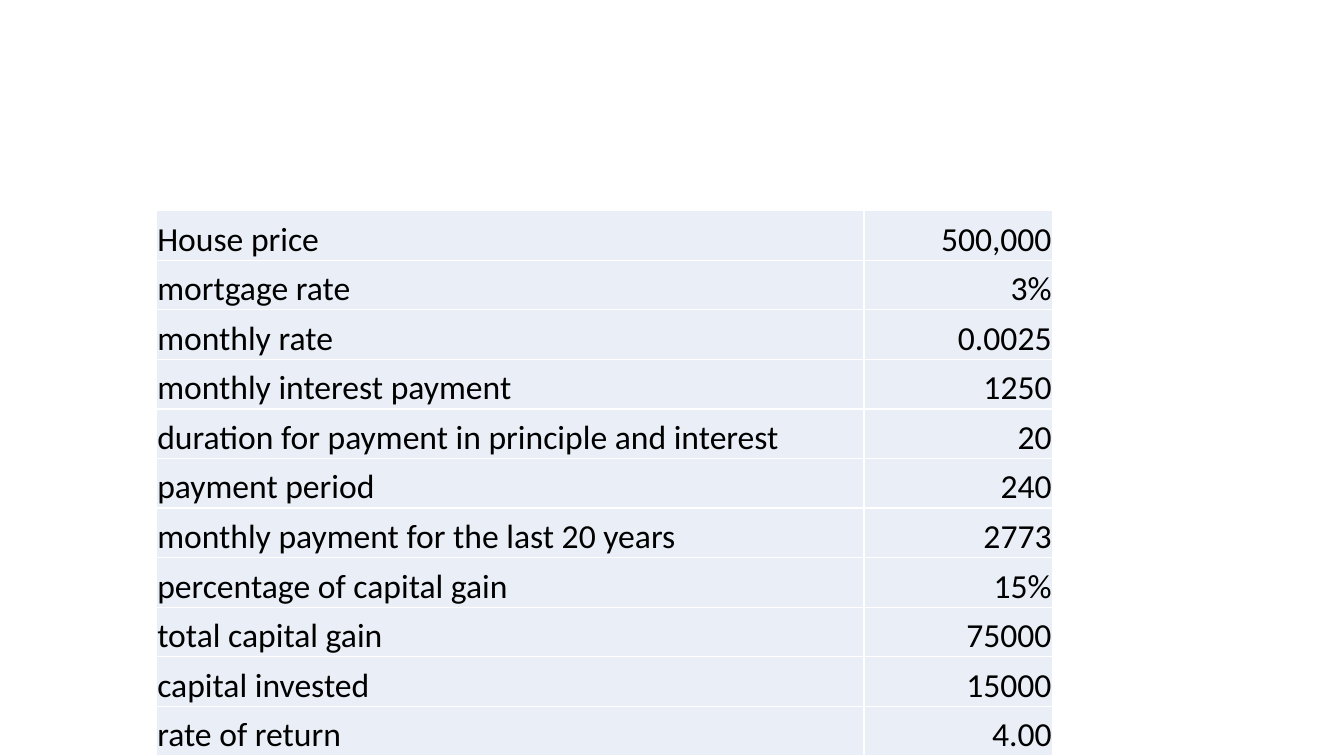
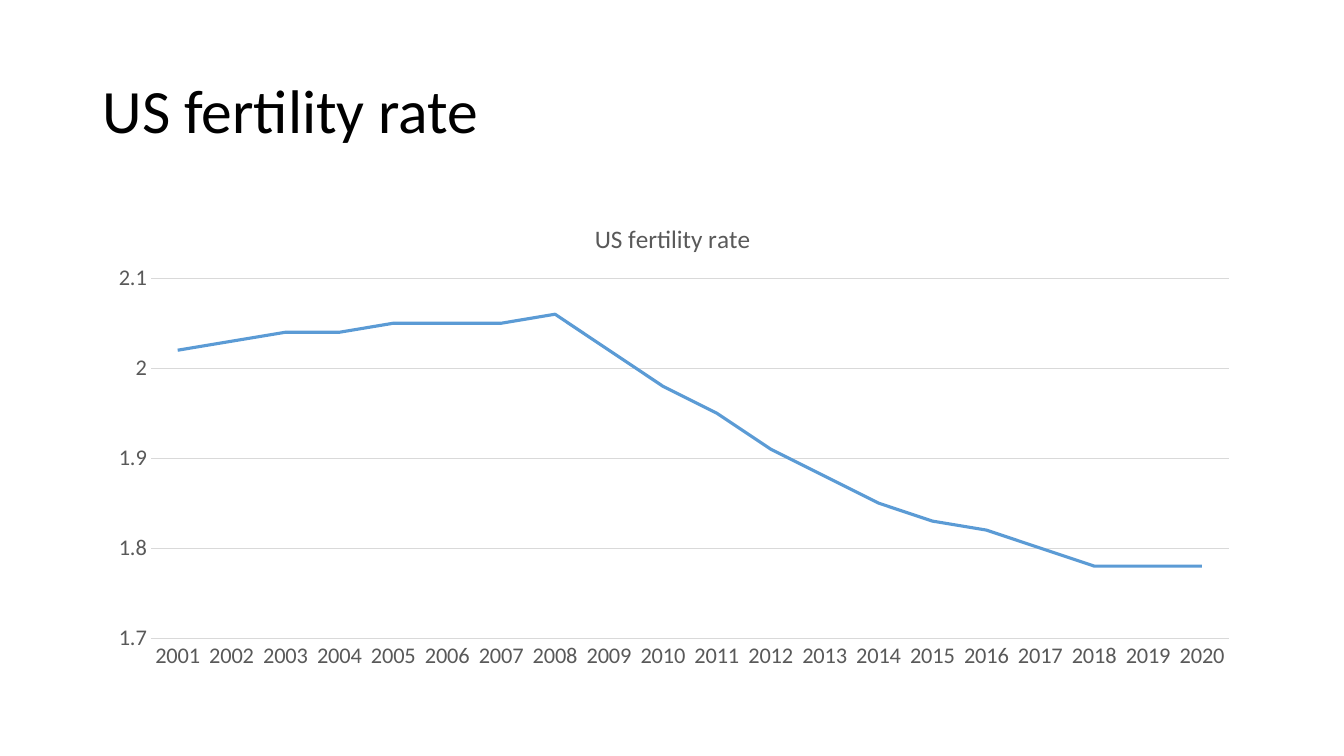
import pptx
import pptx.chart.data
import pptx.dml.color
import pptx.enum.chart
import pptx.enum.text
import pptx.oxml
import pptx.oxml.ns
import pptx.util

Inches = pptx.util.Inches
Pt = pptx.util.Pt
RGBColor = pptx.dml.color.RGBColor
Align = pptx.enum.text.PP_ALIGN
Anchor = pptx.enum.text.MSO_ANCHOR

BLACK = RGBColor(0x00, 0x00, 0x00)
WHITE = RGBColor(0xFF, 0xFF, 0xFF)
PALE = RGBColor(0xEA, 0xEF, 0xF7)
GRAY = RGBColor(0x59, 0x59, 0x59)
GRID = RGBColor(0xD9, 0xD9, 0xD9)
BLUE = RGBColor(0x5B, 0x9B, 0xD5)
FONT = "Calibri"

LOAN = [
    ("House price", "500,000"),
    ("mortgage rate", "3%"),
    ("monthly rate", "0.0025"),
    ("monthly interest payment", "1250"),
    ("duration for payment in principle and interest", "20"),
    ("payment period", "240"),
    ("monthly payment for the last 20 years", "2773"),
    ("percentage of capital gain", "15%"),
    ("total capital gain", "75000"),
    ("capital invested", "15000"),
    ("rate of return", "4.00"),
]
TOPIC = "US fertility rate"
YEARS = [str(year) for year in range(2001, 2021)]
RATES = [2.02, 2.03, 2.04, 2.04, 2.05, 2.05, 2.05, 2.06, 2.02, 1.98,
         1.95, 1.91, 1.88, 1.85, 1.83, 1.82, 1.8, 1.78, 1.78, 1.78]


def style(font, size, color):
    font.name = FONT
    font.size = Pt(size)
    font.bold = False
    font.color.rgb = color


def write(frame, text, size=24, color=BLACK, align=Align.LEFT, space=1.0):
    para = frame.paragraphs[0]
    para.alignment = align
    para.line_spacing = space
    run = para.add_run()
    run.text = text
    style(run.font, size, color)


def add_title(slide, text):
    box = slide.shapes.add_textbox(
        Inches(0.92), Inches(0.4), Inches(11.5), Inches(1.45))
    frame = box.text_frame
    frame.word_wrap = True
    frame.vertical_anchor = Anchor.MIDDLE
    write(frame, text, size=44, space=0.9)


def add_edges(cell):
    props = cell._tc.get_or_add_tcPr()
    space = pptx.oxml.ns.nsdecls("a")
    for index, side in enumerate(("lnL", "lnR", "lnT", "lnB")):
        props.insert(index, pptx.oxml.parse_xml(
            f'<a:{side} {space} w="{Pt(1)}"><a:solidFill>'
            f'<a:srgbClr val="{WHITE}"/></a:solidFill></a:{side}>'))


def fill_cell(cell, text, align):
    cell.vertical_anchor = Anchor.BOTTOM
    cell.margin_left = cell.margin_right = cell.margin_top = Inches(0.01)
    cell.margin_bottom = 0
    cell.fill.solid()
    cell.fill.fore_color.rgb = PALE
    add_edges(cell)
    write(cell.text_frame, text, align=align)


def add_grid(slide, data):
    high = Inches(5.41)
    table = slide.shapes.add_table(
        len(data), 2, Inches(1.55), Inches(2.09), Inches(8.89), high).table
    table.first_row = table.horz_banding = False
    for column, width in zip(table.columns, (7.02, 1.87)):
        column.width = Inches(width)
    for row, pair in zip(table.rows, data):
        row.height = high // len(data)
        for cell, text, align in zip(row.cells, pair, (Align.LEFT, Align.RIGHT)):
            fill_cell(cell, text, align)


def set_line(line, color, width):
    line.color.rgb = color
    line.width = Pt(width)


def set_axis(axis):
    none = pptx.enum.chart.XL_TICK_MARK.NONE
    axis.major_tick_mark = axis.minor_tick_mark = none
    style(axis.tick_labels.font, 16, GRAY)


def place_plot(chart, left, top, width, height):
    area = chart._chartSpace.chart.plotArea
    for old in area.findall(pptx.oxml.ns.qn("c:layout")):
        area.remove(old)
    sizes = "".join(f'<c:{key} val="{value}"/>' for key, value in
                    zip("xywh", (left, top, width, height)))
    area.insert(0, pptx.oxml.parse_xml(
        f'<c:layout {pptx.oxml.ns.nsdecls("c")}><c:manualLayout>'
        '<c:layoutTarget val="inner"/><c:xMode val="edge"/>'
        f'<c:yMode val="edge"/>{sizes}</c:manualLayout></c:layout>'))


def add_graph(slide, title, names, values):
    data = pptx.chart.data.CategoryChartData()
    data.categories = names
    data.add_series("Series 1", values)
    chart = slide.shapes.add_chart(
        pptx.enum.chart.XL_CHART_TYPE.LINE,
        Inches(0.92), Inches(2), Inches(11.5), Inches(4.76), data).chart
    style(chart.font, 10, BLACK)
    chart.has_legend = False
    write(chart.chart_title.text_frame, title, size=18, color=GRAY,
          align=Align.CENTER)
    chart.chart_title.include_in_layout = False

    set_axis(chart.category_axis)
    set_line(chart.category_axis.format.line, GRID, 0.75)
    scale = chart.value_axis
    set_axis(scale)
    scale.minimum_scale = 1.7
    scale.maximum_scale = 2.1
    scale.major_unit = 0.1
    scale.tick_labels.number_format = "General"
    scale.tick_labels.number_format_is_linked = False
    scale.format.line.fill.background()
    set_line(scale.major_gridlines.format.line, GRID, 0.75)

    plot = chart.plots[0]
    plot.vary_by_categories = False
    series = plot.series[0]
    series.smooth = False
    series.marker.style = pptx.enum.chart.XL_MARKER_STYLE.NONE
    set_line(series.format.line, BLUE, 2.25)
    place_plot(chart, 0.05, 0.16, 0.93, 0.75)


def main():
    deck = pptx.Presentation()
    deck.slide_width = Inches(13.33)
    deck.slide_height = Inches(7.5)
    blank = deck.slide_layouts[6]
    add_grid(deck.slides.add_slide(blank), LOAN)
    slide = deck.slides.add_slide(blank)
    add_title(slide, TOPIC)
    add_graph(slide, TOPIC, YEARS, RATES)
    deck.save("out.pptx")


if __name__ == "__main__":
    main()
